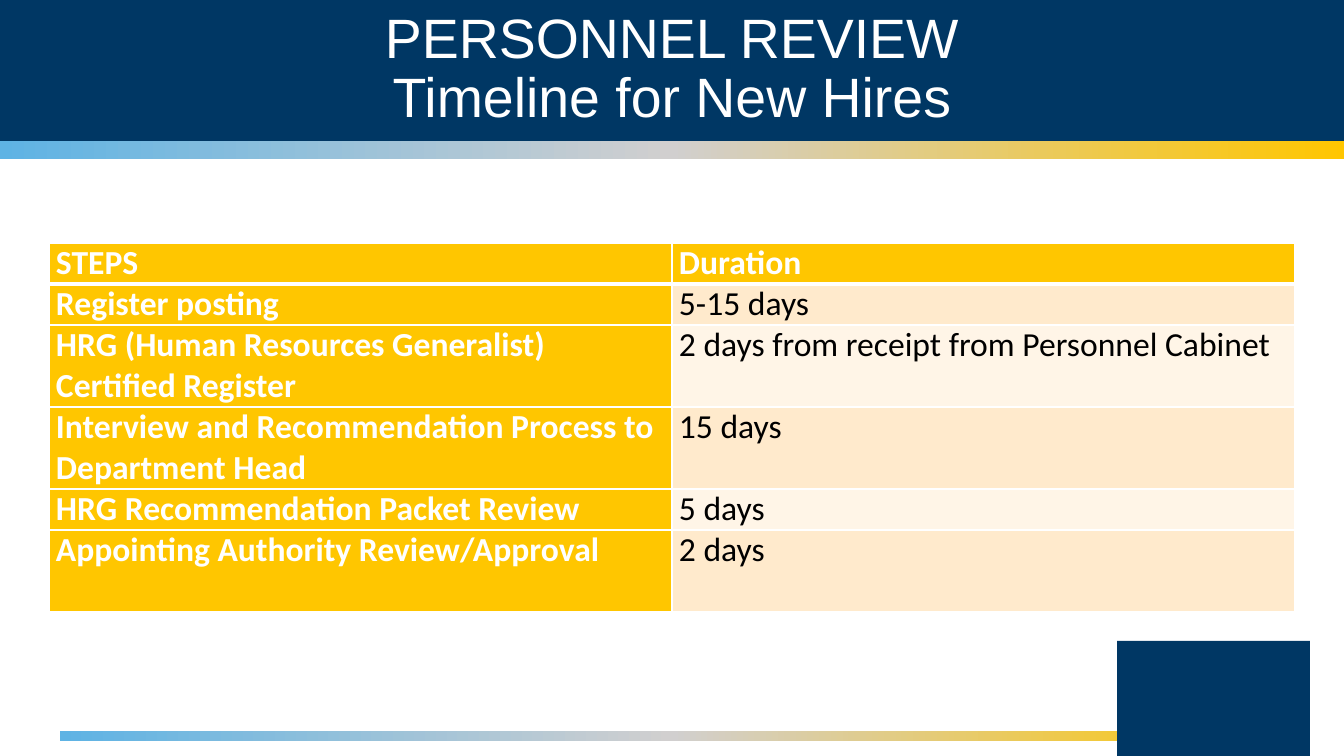
from copy import deepcopy
from dataclasses import dataclass

from lxml import etree
from pptx import Presentation
from pptx.dml.color import RGBColor
from pptx.enum.shapes import MSO_SHAPE
from pptx.enum.text import MSO_ANCHOR, PP_ALIGN
from pptx.oxml.ns import qn
from pptx.util import Pt

RECTANGLE = MSO_SHAPE.RECTANGLE
MIDDLE = MSO_ANCHOR.MIDDLE
TOP = MSO_ANCHOR.TOP
LEFT = PP_ALIGN.LEFT
CENTER = PP_ALIGN.CENTER
EMU_PER_PX = 914400 / 100.8


@dataclass(frozen=True)
class Theme:
    navy: str = "003764"
    sky: str = "5EB3E4"
    silver: str = "D1CFCF"
    gold: str = "FFC600"
    peach: str = "FFEACC"
    cream: str = "FFF5E7"
    white: str = "FFFFFF"
    black: str = "000000"
    title_font: str = "Arial"
    table_font: str = "Calibri"
    title_size: float = 39.6
    table_size: int = 24


THEME = Theme()

STEPS = [
    ("STEPS", "Duration", 1),
    ("Register posting", "5-15 days", 1),
    ("HRG (Human Resources Generalist) Certified Register",
     "2 days from receipt from Personnel Cabinet", 2),
    ("Interview and Recommendation Process to Department Head", "15 days", 2),
    ("HRG Recommendation Packet Review", "5 days", 1),
    ("Appointing Authority Review/Approval", "2 days", 2),
]


def px(length):
    return round(length * EMU_PER_PX)


def write_text(frame, text, *, font, size, color, bold=False, align=LEFT, spacing=None):
    frame.word_wrap = True
    paragraph = frame.paragraphs[0]
    paragraph.alignment = align
    paragraph.line_spacing = spacing
    for index, line in enumerate(text.split("\n")):
        if index:
            paragraph.add_line_break()
        run = paragraph.add_run()
        run.text = line
        run.font.name = font
        run.font.size = Pt(size)
        run.font.bold = bold
        run.font.color.rgb = RGBColor.from_string(color)


def add_block(slide, box, color):
    block = slide.shapes.add_shape(RECTANGLE, *map(px, box))
    block.shadow.inherit = False
    block.line.fill.background()
    block.fill.solid()
    block.fill.fore_color.rgb = RGBColor.from_string(color)
    return block


def add_gradient_bar(slide, box):
    bar = add_block(slide, box, THEME.sky)
    bar.fill.gradient()
    bar.fill.gradient_angle = 0
    stop_list = bar._element.spPr.find(qn("a:gradFill")).find(qn("a:gsLst"))
    stop_list.insert(1, deepcopy(stop_list[0]))
    colors = (THEME.sky, THEME.silver, THEME.gold)
    for stop, color, position in zip(bar.fill.gradient_stops, colors, (0, 0.5, 1)):
        stop.color.rgb = RGBColor.from_string(color)
        stop.position = position


def add_header(slide, box):
    left, top, width, height = box
    band_height = height - 18
    add_block(slide, (left, top, width, band_height), THEME.navy)
    add_gradient_bar(slide, (left, top + band_height, width, 18))
    title = slide.shapes.add_textbox(*map(px, (left, top, width, band_height - 1)))
    title.text_frame.vertical_anchor = MIDDLE
    write_text(title.text_frame, "PERSONNEL REVIEW\nTimeline for New Hires",
               font=THEME.title_font, size=THEME.title_size, color=THEME.white,
               align=CENTER, spacing=0.9)


def set_borders(cell, **widths):
    properties = cell._tc.get_or_add_tcPr()
    for side in "LRTB":
        line = etree.SubElement(properties, qn(f"a:ln{side}"), w=str(Pt(widths.get(side, 1))))
        fill = etree.SubElement(line, qn("a:solidFill"))
        etree.SubElement(fill, qn("a:srgbClr"), val=THEME.white)


def add_timeline_table(slide, box, line_height):
    frame = slide.shapes.add_table(len(STEPS), 2, *map(px, box))
    table = frame.table
    for column in table.columns:
        column.width = px(box[2] / 2)
    for row, (step, duration, lines) in enumerate(STEPS):
        table.rows[row].height = px(line_height * lines)
        for column, text in enumerate((step, duration)):
            cell = table.cell(row, column)
            heading = row == 0 or column == 0
            band = THEME.peach if row % 2 else THEME.cream
            set_borders(cell, T=3 if row == 1 else 1, B=3 if row == 0 else 1)
            cell.fill.solid()
            cell.fill.fore_color.rgb = RGBColor.from_string(THEME.gold if heading else band)
            cell.margin_left = cell.margin_right = px(7)
            cell.margin_top = cell.margin_bottom = 0
            cell.vertical_anchor = TOP
            write_text(cell.text_frame, text, font=THEME.table_font, size=THEME.table_size,
                       color=THEME.white if heading else THEME.black, bold=heading)


def add_footer(slide, box):
    left, top, width, height = box
    add_gradient_bar(slide, (left, top + 90, width - 26, 10))
    add_block(slide, (left + width - 193, top, 193, height), THEME.navy)


def main():
    presentation = Presentation()
    presentation.slide_width = px(1344)
    presentation.slide_height = px(756)
    slide = presentation.slides.add_slide(presentation.slide_layouts[6])
    add_header(slide, (0, 0, 1344, 159))
    add_footer(slide, (60, 641, 1250, 115))
    add_timeline_table(slide, (49, 243, 1246, 369), 41)
    presentation.save("out.pptx")


if __name__ == "__main__":
    main()
